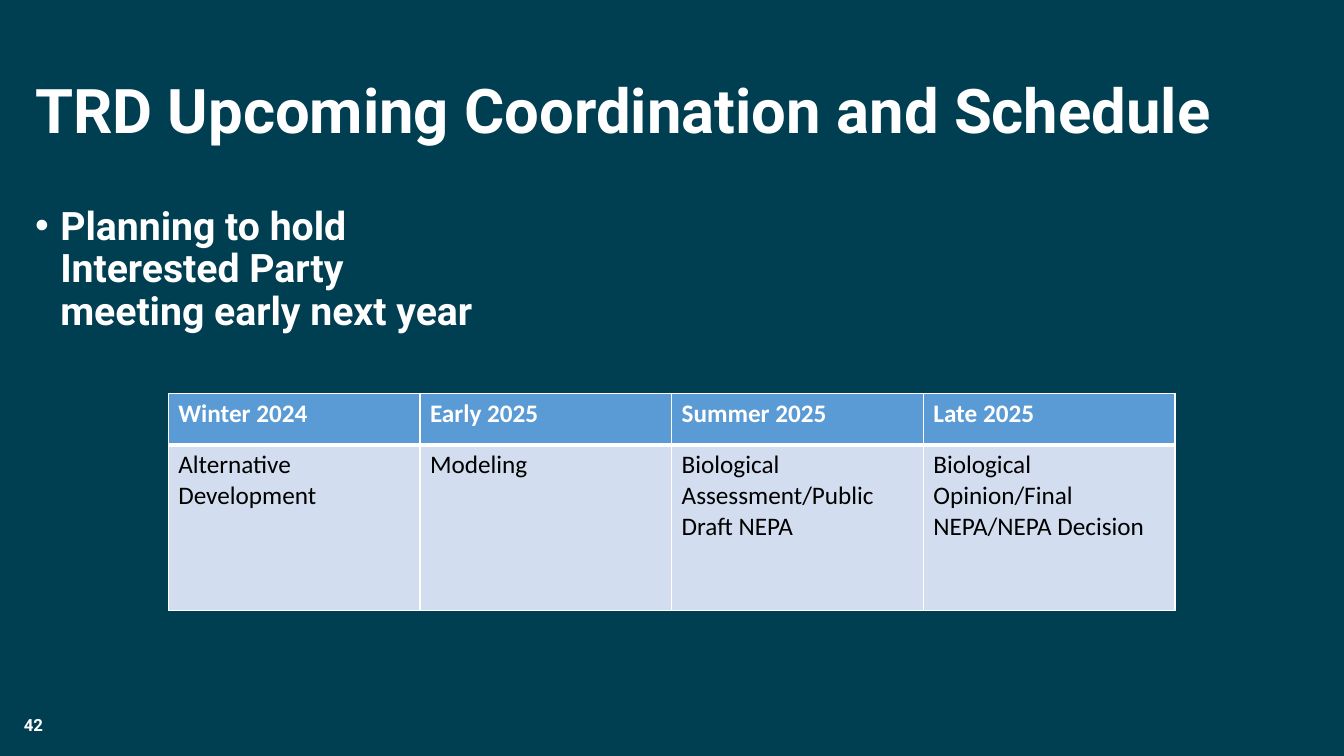
"""Build the TRD coordination and schedule slide."""
from lxml import etree
from pptx import Presentation
from pptx import util as u
from pptx.dml import color
from pptx.enum import text
from pptx.oxml import ns

WHITE, BLACK, TEAL, BLUE, PALE = "FFFFFF", "000000", "003E51", "5B9BD5", "D2DEEF"


def paint(target, shade):
    target.solid()
    target.fore_color.rgb = color.RGBColor.from_string(shade)


def write(para, words, font, size, shade, bold):
    span = para.add_run()
    span.text = words
    span.font.name = font
    span.font.size = u.Pt(size)
    span.font.bold = bold
    paint(span.font.fill, shade)


deck = Presentation()
deck.slide_width, deck.slide_height = u.Pt(960), u.Pt(540)
page = deck.slides.add_slide(deck.slide_layouts[6])
paint(page.background.fill, TEAL)

middle, top = text.MSO_ANCHOR.MIDDLE, text.MSO_ANCHOR.TOP
boxes = [
    ("TRD Upcoming Coordination and Schedule", 44, (18, 28.8, 921.6, 104.4), middle, 0.9),
    ("42", 12, (10, 503.3, 216, 28.8), middle, 1),
    ("Planning to hold Interested Party meeting early next year", 28,
     (18, 144, 333.4, 342.7), top, 0.9),
]
for words, size, place, anchor, spacing in boxes:
    box = page.shapes.add_textbox(*[u.Pt(length) for length in place])
    box.text_frame.word_wrap = True
    box.text_frame.vertical_anchor = anchor
    para = box.text_frame.paragraphs[0]
    para.line_spacing = spacing
    write(para, words, "Roboto", size, WHITE, True)

bullet_props = para._p.get_or_add_pPr()
bullet_props.set("marL", str(u.Pt(18)))
bullet_props.set("indent", str(u.Pt(-18)))
etree.SubElement(bullet_props, ns.qn("a:buFont")).set("typeface", "Arial")
etree.SubElement(bullet_props, ns.qn("a:buChar")).set("char", "•")

schedule = [
    ("Winter 2024", "Alternative Development"),
    ("Early 2025", "Modeling"),
    ("Summer 2025", "Biological Assessment/Public Draft NEPA"),
    ("Late 2025", "Biological Opinion/Final NEPA/NEPA Decision"),
]
row_styles = [(36.8, BLUE, WHITE, True, 3, 1), (118.4, PALE, BLACK, False, 1, 3)]
table = page.shapes.add_table(
    2, len(schedule), u.Pt(120.2), u.Pt(281), u.Pt(719.2), u.Pt(155.2)).table
for column in table.columns:
    column.width = u.Pt(179.8)

for row, (height, fill, ink, bold, below, above) in enumerate(row_styles):
    table.rows[row].height = u.Pt(height)
    for col, entry in enumerate(schedule):
        cell = table.cell(row, col)
        write(cell.text_frame.paragraphs[0], entry[row], "Calibri", 18, ink, bold)
        cell_props = cell._tc.get_or_add_tcPr()
        for side, width in (("L", 1), ("R", 1), ("T", above), ("B", below)):
            edge = etree.SubElement(cell_props, ns.qn("a:ln" + side), w=str(u.Pt(width)))
            edge_fill = etree.SubElement(edge, ns.qn("a:solidFill"))
            etree.SubElement(edge_fill, ns.qn("a:srgbClr"), val=WHITE)
        paint(cell.fill, fill)

deck.save("out.pptx")
